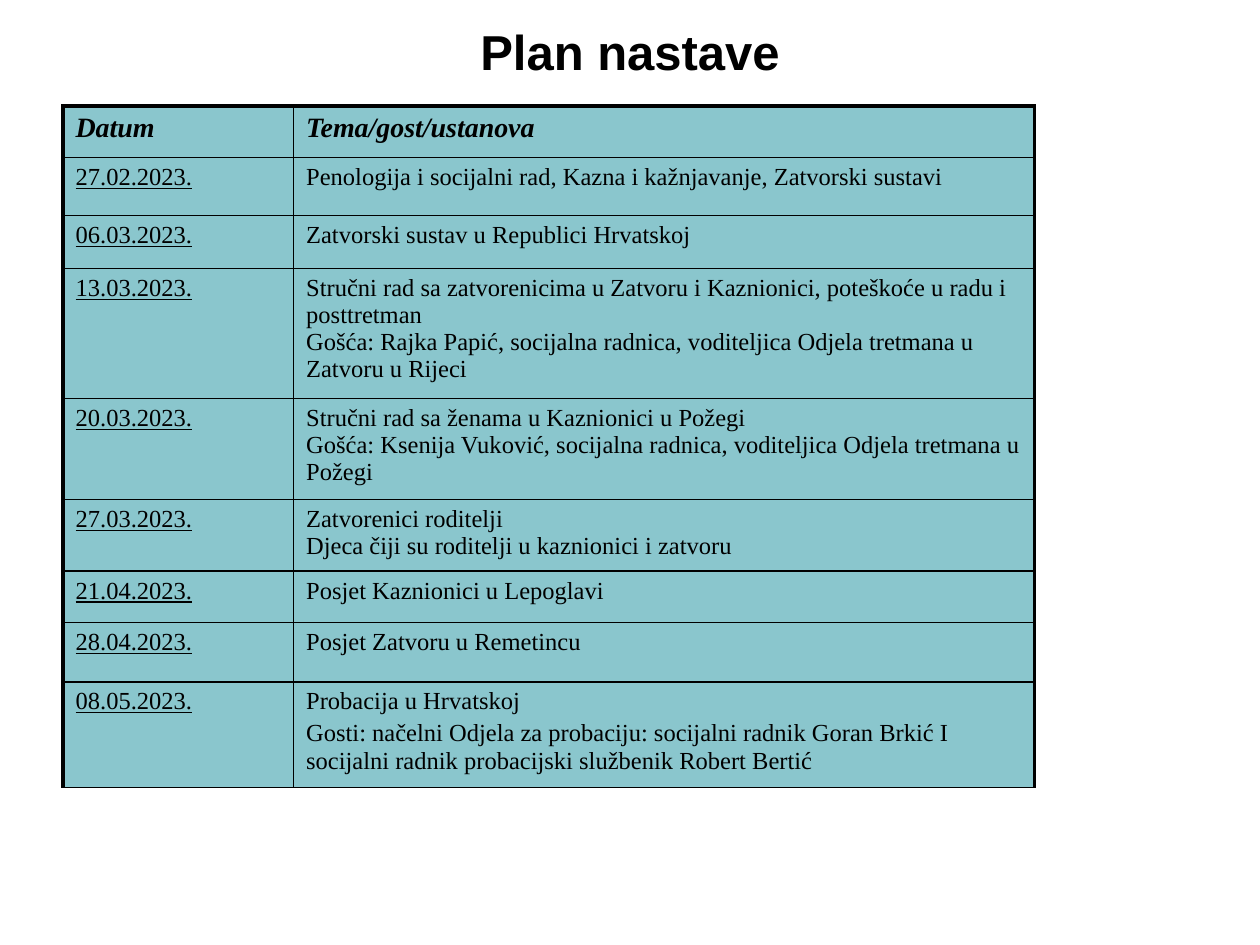
from lxml.etree import SubElement
from pptx import Presentation
from pptx.dml.color import RGBColor
from pptx.enum.text import MSO_ANCHOR, PP_ALIGN
from pptx.oxml.ns import qn
from pptx.util import Inches, Pt

COLORS = {"ink": "000000", "cell": "8AC6CD"}
OUTER, INNER = 2.25, 1
COLUMN_WIDTHS = [1.83, 5.88]
HEADINGS = ["Datum", "Tema/gost/ustanova"]
SESSIONS = [
    (0.46, "27.02.2023.", ["Penologija i socijalni rad, Kazna i kažnjavanje, Zatvorski sustavi"], 0),
    (0.42, "06.03.2023.", ["Zatvorski sustav u Republici Hrvatskoj"], 0),
    (0.96, "13.03.2023.", [
        "Stručni rad sa zatvorenicima u Zatvoru i Kaznionici, poteškoće u radu i posttretman",
        "Gošća: Rajka Papić, socijalna radnica, voditeljica Odjela tretmana u Zatvoru u Rijeci"], 0),
    (0.74, "20.03.2023.", [
        "Stručni rad sa ženama u Kaznionici u Požegi",
        "Gošća: Ksenija Vuković, socijalna radnica, voditeljica Odjela tretmana u Požegi"], 0),
    (0.53, "27.03.2023.", [
        "Zatvorenici roditelji",
        "Djeca čiji su roditelji u kaznionici i zatvoru"], 0),
    (0.41, "21.04.2023.", ["Posjet Kaznionici u Lepoglavi"], 0),
    (0.47, "28.04.2023.", ["Posjet Zatvoru u Remetincu"], 0),
    (0.78, "08.05.2023.", [
        "Probacija u Hrvatskoj",
        "Gosti: načelni Odjela za probaciju: socijalni radnik Goran Brkić I "
        "socijalni radnik probacijski službenik Robert Bertić"], 2.8),
]


def add_run(paragraph, words, size, font="Times New Roman", bold=False, italic=False, underline=False):
    """Append one styled run to a paragraph."""
    run = paragraph.add_run()
    run.text = words
    run.font.name, run.font.size = font, Pt(size)
    run.font.bold, run.font.italic, run.font.underline = bold, italic, underline
    run.font.color.rgb = RGBColor.from_string(COLORS["ink"])


def add_title(slide, left, top, width, height):
    """Place the centred slide title in the given box."""
    title = slide.shapes.add_textbox(Inches(left), Inches(top), Inches(width), Inches(height))
    frame = title.text_frame
    frame.word_wrap = True
    frame.vertical_anchor = MSO_ANCHOR.MIDDLE
    frame.paragraphs[0].alignment = PP_ALIGN.CENTER
    add_run(frame.paragraphs[0], "Plan nastave", 28, font="Arial", bold=True)


def style_cell(cell, borders):
    """Give a cell its borders and its fill."""
    properties = cell._tc.get_or_add_tcPr()
    for side, weight in borders.items():
        line = SubElement(properties, qn(f"a:ln{side}"), w=str(Pt(weight)))
        SubElement(SubElement(line, qn("a:solidFill")), qn("a:srgbClr"), val=COLORS["ink"])
    cell.fill.solid()
    cell.fill.fore_color.rgb = RGBColor.from_string(COLORS["cell"])


def fill_cell(cell, lines, gap=0, **style):
    """Write each line as its own paragraph, with a gap between paragraphs."""
    frame = cell.text_frame
    for index, words in enumerate(lines):
        paragraph = frame.add_paragraph() if index else frame.paragraphs[0]
        paragraph.space_before = Pt(gap if index else 0)
        add_run(paragraph, words, **style)


def add_schedule(slide, left, top, width, height):
    """Place the table of dates and topics in the given box."""
    schedule = slide.shapes.add_table(
        len(SESSIONS) + 1, len(HEADINGS), Inches(left), Inches(top), Inches(width), Inches(height)).table
    schedule.horz_banding = False
    for column, column_width in zip(schedule.columns, COLUMN_WIDTHS):
        column.width = Inches(column_width)
    for row, row_height in zip(schedule.rows, [0.41] + [session[0] for session in SESSIONS]):
        row.height = Inches(row_height)
        date_cell, topic_cell = row.cells
        top_weight = OUTER if row is schedule.rows[0] or date_cell._tc.row_idx == 0 else INNER
        style_cell(date_cell, {"L": OUTER, "R": INNER, "T": top_weight, "B": INNER})
        style_cell(topic_cell, {"L": INNER, "R": OUTER, "T": top_weight, "B": INNER})
    for column, heading in enumerate(HEADINGS):
        fill_cell(schedule.cell(0, column), [heading], size=16, bold=True, italic=True)
    for row, (_, date, topics, gap) in enumerate(SESSIONS, start=1):
        fill_cell(schedule.cell(row, 0), [date], size=14, underline=True)
        fill_cell(schedule.cell(row, 1), topics, gap, size=14)


def main():
    """Build the lesson plan slide and save it."""
    deck = Presentation()
    deck.slide_width, deck.slide_height = Inches(10), Inches(7.5)
    slide = deck.slides.add_slide(deck.slide_layouts[6])
    add_title(slide, 0.5, 0.21, 9, 0.39)
    add_schedule(slide, 0.5, 0.84, sum(COLUMN_WIDTHS), 5.18)
    deck.save("out.pptx")


if __name__ == "__main__":
    main()
